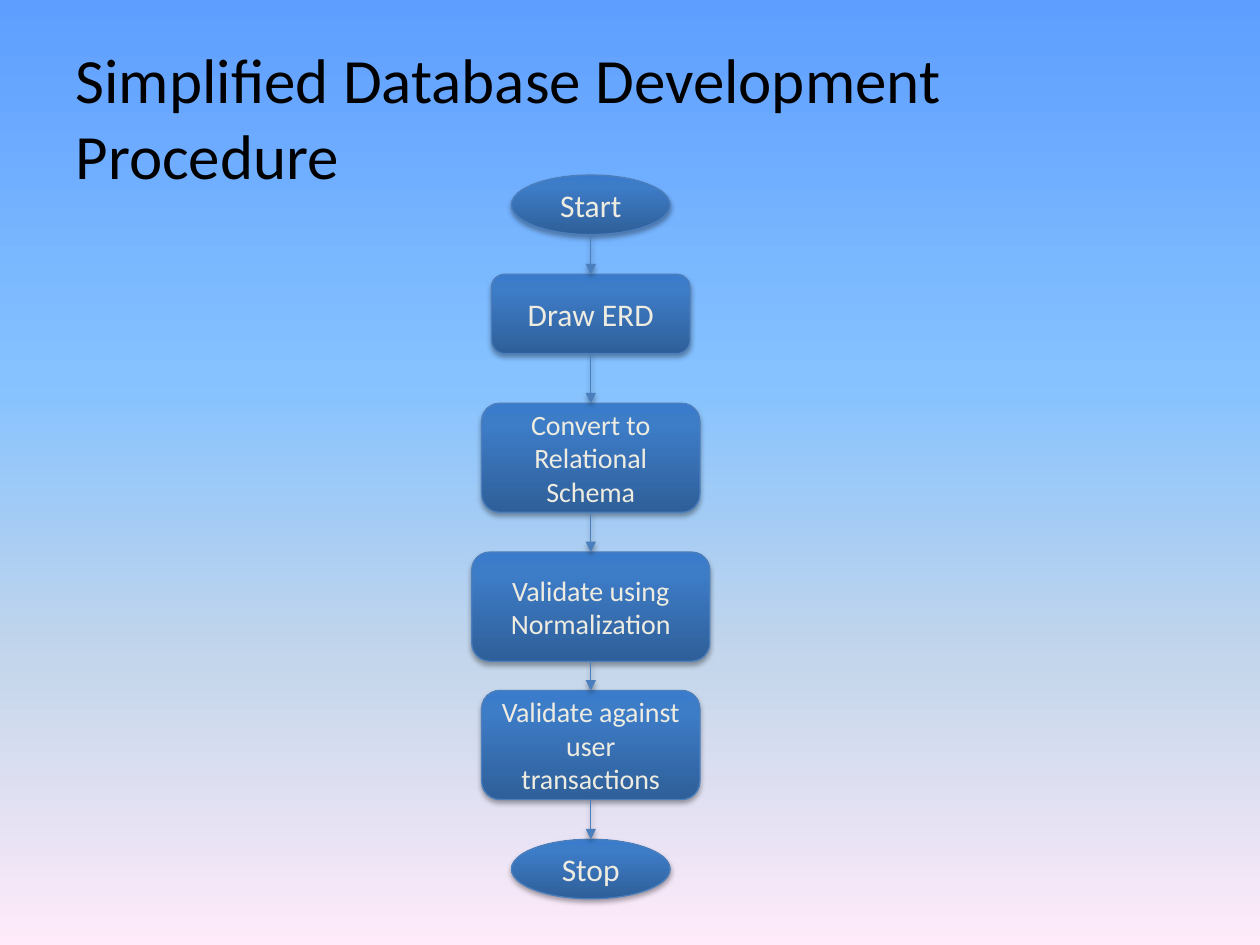
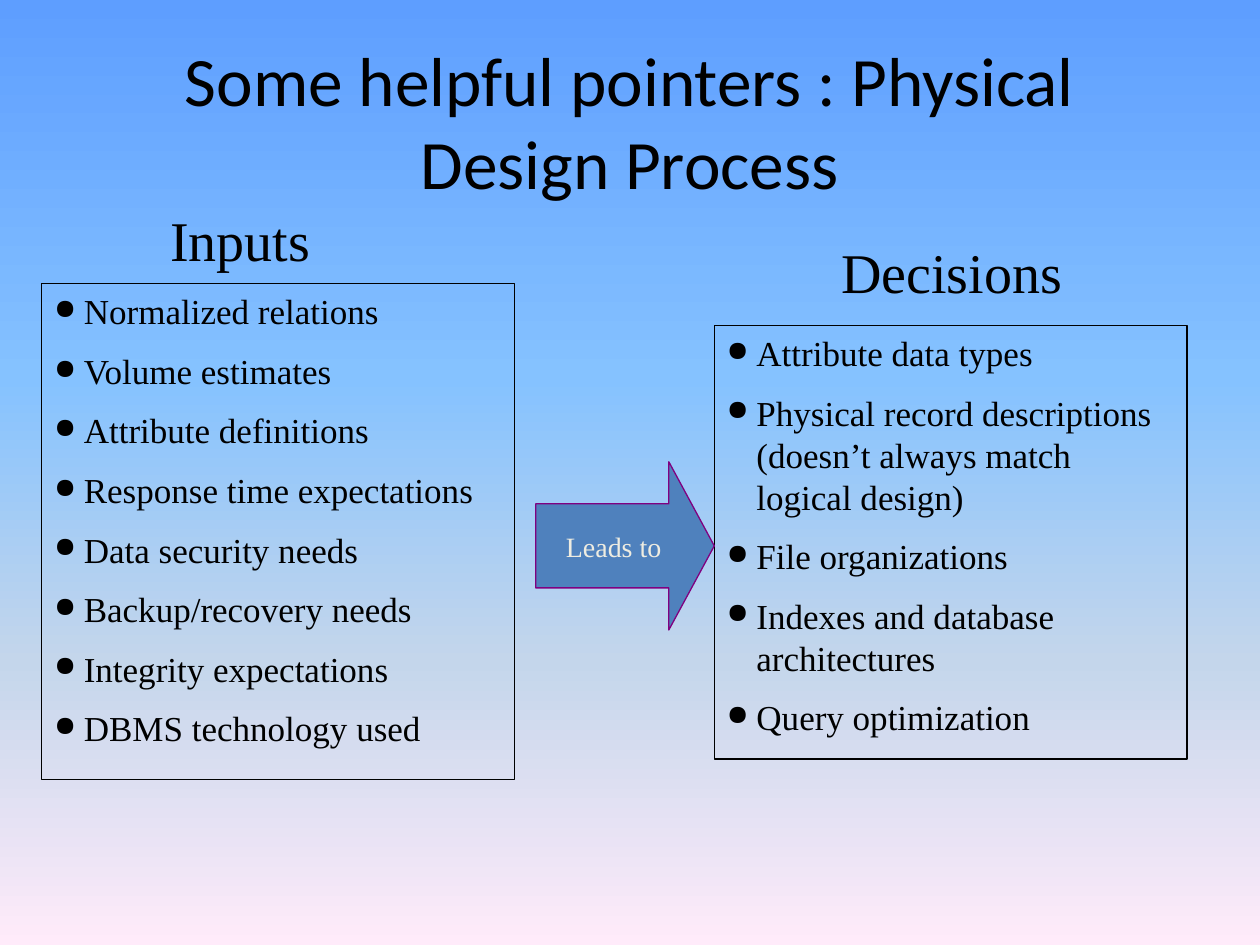
from dataclasses import dataclass

from lxml.etree import SubElement
from pptx import Presentation
from pptx.dml.color import RGBColor
from pptx.enum.shapes import MSO_CONNECTOR, MSO_SHAPE
from pptx.enum.text import MSO_ANCHOR, MSO_AUTO_SIZE, PP_ALIGN
from pptx.oxml import parse_xml
from pptx.oxml.ns import nsdecls, qn
from pptx.util import Cm, Pt

# Shared look
SANS, SERIF = "Calibri", "Times New Roman"
BLACK, CREAM = "000000", "EEECE1"
NODE_LINE, ARROW_FILL, ARROW_LINE = "4B7EBC", "4F81BD", "800080"
SKY = [(0, "5E9EFF"), (40, "85C2FF"), (70, "C4D6EB"), (100, "FFEBFA")]
NODE_FILL = [(0, "2F5F99"), (80, "3D7CC7"), (100, "3A7CCB")]
FLOW_CENTER = 11.91


@dataclass
class Node:
    text: str
    kind: MSO_SHAPE
    top: float
    width: float
    height: float
    size: int
    wrap: bool


@dataclass
class Panel:
    heading: str
    heading_box: tuple[float, float, float, float]
    list_box: tuple[float, float, float, float]
    items: list[str]


NODES = [
    Node("Start", MSO_SHAPE.OVAL, 3.53, 3.2, 1.2, 18, False),
    Node("Draw ERD", MSO_SHAPE.ROUNDED_RECTANGLE, 5.53, 4, 1.6, 18, False),
    Node("Convert to Relational Schema", MSO_SHAPE.ROUNDED_RECTANGLE, 8.13, 4.4, 2.2, 16, True),
    Node("Validate using Normalization", MSO_SHAPE.ROUNDED_RECTANGLE, 11.13, 4.8, 2.2, 16, True),
    Node("Validate against user transactions", MSO_SHAPE.ROUNDED_RECTANGLE, 13.92, 4.4, 2.2, 16, True),
    Node("Stop", MSO_SHAPE.OVAL, 16.92, 3.2, 1.2, 18, False),
]

PANELS = [
    Panel("Inputs", (3.18, 4.01, 3.38, 1.6), (0.84, 5.72, 9.53, 10), [
        "Normalized relations", "Volume estimates", "Attribute definitions",
        "Response time expectations", "Data security needs", "Backup/recovery needs",
        "Integrity expectations", "DBMS technology used",
    ]),
    Panel("Decisions", (16.71, 4.66, 4.98, 1.6), (14.4, 6.56, 9.53, 8.74), [
        "Attribute data types",
        "Physical record descriptions (doesn’t always match logical design)",
        "File organizations", "Indexes and database architectures", "Query optimization",
    ]),
]


def rgb(color: str) -> RGBColor:
    return RGBColor.from_string(color)


def box_cm(box: tuple) -> list:
    return [Cm(v) for v in box]


def set_gradient(fill, owner, stops: list, angle: int) -> None:
    """Fill with colour stops; the angle runs clockwise in degrees."""
    fill.gradient()
    fill.gradient_angle = 360 - angle
    gs_list = next(owner.iter(qn("a:gsLst")))
    for gs in list(gs_list):
        gs_list.remove(gs)
    for pos, color in stops:
        gs = SubElement(gs_list, qn("a:gs"), pos=str(pos * 1000))
        SubElement(gs, qn("a:srgbClr"), val=color)


def set_line(line, color: str) -> None:
    line.color.rgb = rgb(color)
    line.width = Pt(0.75)


def add_shadow(sp) -> None:
    sp.element.spPr.append(parse_xml(
        f'<a:effectLst {nsdecls("a")}><a:outerShdw blurRad="{Pt(3.1)}" dist="{Pt(1.8)}" '
        'dir="5400000" rotWithShape="0"><a:srgbClr val="000000"><a:alpha val="35000"/>'
        "</a:srgbClr></a:outerShdw></a:effectLst>"))


def format_text(tf, size: float, font: str, color: str, align=PP_ALIGN.LEFT,
                anchor=MSO_ANCHOR.MIDDLE, wrap: bool = True) -> None:
    tf.word_wrap = wrap
    tf.auto_size = MSO_AUTO_SIZE.NONE
    tf.vertical_anchor = anchor
    for p in tf.paragraphs:
        p.alignment = align
        for r in p.runs:
            r.font.size = Pt(size)
            r.font.name = font
            r.font.color.rgb = rgb(color)


def add_titled_slide(prs, title: str, box: tuple, size: float, align):
    s = prs.slides.add_slide(prs.slide_layouts[5])
    sp = s.shapes.title
    sp.left, sp.top, sp.width, sp.height = box_cm(box)
    sp.text_frame.text = title
    format_text(sp.text_frame, size, SANS, BLACK, align)
    return s


def add_node(s, node: Node):
    left = FLOW_CENTER - node.width / 2
    sp = s.shapes.add_shape(node.kind, *box_cm((left, node.top, node.width, node.height)))
    set_gradient(sp.fill, sp.element, NODE_FILL, 270)
    set_line(sp.line, NODE_LINE)
    add_shadow(sp)
    sp.text_frame.text = node.text
    format_text(sp.text_frame, node.size, SANS, CREAM, PP_ALIGN.CENTER, wrap=node.wrap)
    return sp


def add_flow_arrow(s, upper, lower) -> None:
    x = Cm(FLOW_CENTER)
    cxn = s.shapes.add_connector(MSO_CONNECTOR.STRAIGHT, x, upper.top + upper.height, x, lower.top)
    if upper.auto_shape_type == MSO_SHAPE.ROUNDED_RECTANGLE:
        cxn.begin_connect(upper, 2)
    cxn.end_connect(lower, 0)
    set_line(cxn.line, NODE_LINE)
    SubElement(cxn.element.spPr.find(qn("a:ln")), qn("a:tailEnd"), type="triangle")
    add_shadow(cxn)


def add_bullet(p) -> None:
    pPr = p._p.get_or_add_pPr()
    pPr.set("marL", str(Cm(0.6)))
    pPr.set("indent", str(-Cm(0.6)))
    SubElement(SubElement(pPr, qn("a:buClr")), qn("a:srgbClr"), val=BLACK)
    SubElement(pPr, qn("a:buSzPct"), val="80000")
    SubElement(pPr, qn("a:buChar"), char="●")


def add_panel(s, panel: Panel) -> None:
    # Framed list
    sp = s.shapes.add_shape(MSO_SHAPE.RECTANGLE, *box_cm(panel.list_box))
    sp.shadow.inherit = False
    sp.fill.background()
    set_line(sp.line, BLACK)
    tf = sp.text_frame
    tf.text = "\n".join(panel.items)
    format_text(tf, 20, SERIF, BLACK, anchor=MSO_ANCHOR.TOP)
    for i, p in enumerate(tf.paragraphs):
        p.space_before = Pt(10 if i else 0)
        add_bullet(p)
    # Heading above the list
    tf = s.shapes.add_textbox(*box_cm(panel.heading_box)).text_frame
    tf.text = panel.heading
    format_text(tf, 32, SERIF, BLACK, anchor=MSO_ANCHOR.TOP, wrap=False)


def add_leads_to_arrow(s) -> None:
    sp = s.shapes.add_shape(MSO_SHAPE.RIGHT_ARROW, *box_cm((10.8, 9.31, 3.6, 3.39)))
    sp.adjustments[0], sp.adjustments[1] = 0.5, 0.27
    sp.shadow.inherit = False
    sp.fill.solid()
    sp.fill.fore_color.rgb = rgb(ARROW_FILL)
    set_line(sp.line, ARROW_LINE)
    sp.text_frame.text = "Leads to"
    format_text(sp.text_frame, 16, SERIF, CREAM, PP_ALIGN.CENTER, wrap=False)


def build_procedure(prs) -> None:
    s = add_titled_slide(prs, "Simplified Database Development Procedure",
                         (1.27, 0.76, 22.86, 3.18), 36, PP_ALIGN.LEFT)
    shapes = [add_node(s, node) for node in NODES]
    for upper, lower in zip(shapes, shapes[1:]):
        add_flow_arrow(s, upper, lower)


def build_physical_design(prs) -> None:
    s = add_titled_slide(prs, "Some helpful pointers : Physical Design Process",
                         (1.9, 0.84, 21.59, 3.18), 39.6, PP_ALIGN.CENTER)
    for panel in PANELS:
        add_panel(s, panel)
    add_leads_to_arrow(s)


def main() -> None:
    prs = Presentation()
    prs.slide_width, prs.slide_height = Cm(25.4), Cm(19.05)
    master = prs.slide_master
    set_gradient(master.background.fill, master.element, SKY, 90)
    build_procedure(prs)
    build_physical_design(prs)
    prs.save("out.pptx")


if __name__ == "__main__":
    main()
